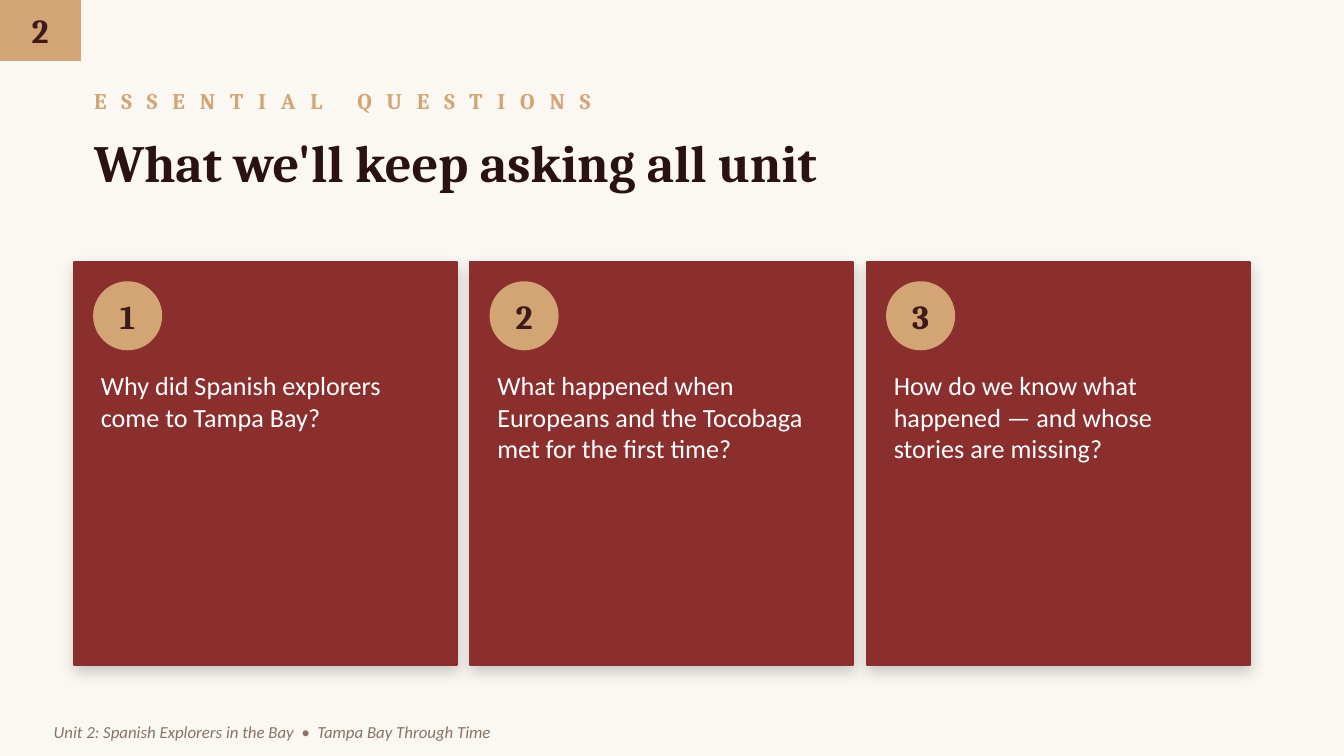
from lxml.etree import SubElement
from pptx import Presentation
from pptx.dml.color import RGBColor
from pptx.enum.shapes import MSO_SHAPE
from pptx.enum.text import MSO_ANCHOR, PP_ALIGN
from pptx.oxml.ns import qn
from pptx.util import Pt

CREAM = RGBColor(0xFB, 0xF7, 0xF2)
TAN = RGBColor(0xD4, 0xA5, 0x74)
BRICK = RGBColor(0x8B, 0x2E, 0x2E)
BROWN = RGBColor(0x3E, 0x1A, 0x1A)
DARK = RGBColor(0x2A, 0x12, 0x12)
TAUPE = RGBColor(0x8A, 0x72, 0x68)
WHITE = RGBColor(0xFF, 0xFF, 0xFF)

QUESTIONS = [
    "Why did Spanish explorers come to Tampa Bay?",
    "What happened when Europeans and the Tocobaga met for the first time?",
    "How do we know what happened — and whose stories are missing?",
]
CARD_LEFT, CARD_TOP = 39.6, 140.4
CARD_WIDTH, CARD_HEIGHT = 205.2, 216
CARD_GAP = 7.2


class QuestionPage:
    FORMATS = {
        "badge": {"name": "Cambria", "size": Pt(18), "bold": True, "color": BROWN},
        "kicker": {"name": "Cambria", "size": Pt(12), "bold": True, "color": TAN},
        "title": {"name": "Cambria", "size": Pt(28), "bold": True, "color": DARK},
        "question": {"name": "Calibri", "size": Pt(14), "color": WHITE},
        "footer": {"name": "Calibri", "size": Pt(9), "italic": True, "color": TAUPE},
    }

    def __init__(self, deck):
        self.page = deck.slides.add_slide(deck.slide_layouts[6])
        fill = self.page.background.fill
        fill.solid()
        fill.fore_color.rgb = CREAM

    def fill_text(self, box, text, style, align=PP_ALIGN.LEFT, anchor=MSO_ANCHOR.MIDDLE):
        frame = box.text_frame
        settings = {"word_wrap": True, "vertical_anchor": anchor, "margin_left": 0,
                    "margin_top": 0, "margin_right": 0, "margin_bottom": 0}
        for name, value in settings.items():
            setattr(frame, name, value)
        para = frame.paragraphs[0]
        para.alignment = align
        span = para.add_run()
        span.text = text
        for name, value in self.FORMATS[style].items():
            if name == "color":
                span.font.color.rgb = value
            else:
                setattr(span.font, name, value)
        return span

    def text(self, left, top, width, height, text, style, anchor=MSO_ANCHOR.MIDDLE):
        box = self.page.shapes.add_textbox(Pt(left), Pt(top), Pt(width), Pt(height))
        return self.fill_text(box, text, style, anchor=anchor)

    def shape(self, kind, left, top, width, height, color):
        shape = self.page.shapes.add_shape(kind, Pt(left), Pt(top), Pt(width), Pt(height))
        shape.shadow.inherit = False
        shape.fill.solid()
        shape.fill.fore_color.rgb = color
        shape.line.color.rgb = color
        shape.line.width = Pt(1)
        return shape

    def badge(self, kind, left, top, width, height, number):
        shape = self.shape(kind, left, top, width, height, TAN)
        self.fill_text(shape, str(number), "badge", PP_ALIGN.CENTER)

    def card(self, left, number, question):
        card = self.shape(MSO_SHAPE.RECTANGLE, left, CARD_TOP, CARD_WIDTH, CARD_HEIGHT, BRICK)
        self.drop_shadow(card)
        self.badge(MSO_SHAPE.OVAL, left + 10.8, CARD_TOP + 10.8, 36, 36, number)
        self.text(left + 14.4, CARD_TOP + 57.6, CARD_WIDTH - 28.8, CARD_HEIGHT - 68.4,
                  question, "question", MSO_ANCHOR.TOP)

    def drop_shadow(self, shape):
        """Add a soft black shadow falling straight down."""
        effects = shape._element.spPr.find(qn("a:effectLst"))
        shadow = SubElement(effects, qn("a:outerShdw"), blurRad=str(Pt(8)), dist=str(Pt(3)),
                            dir="5400000", algn="bl", rotWithShape="0")
        color = SubElement(shadow, qn("a:srgbClr"), val="000000")
        SubElement(color, qn("a:alpha"), val="18000")


def main():
    deck = Presentation()
    deck.slide_width, deck.slide_height = Pt(720), Pt(405)
    page = QuestionPage(deck)
    page.badge(MSO_SHAPE.RECTANGLE, 0, 0, 43.2, 32.4, 2)
    kicker = page.text(50.4, 39.6, 619.2, 28.8, "ESSENTIAL QUESTIONS", "kicker")
    kicker._r.get_or_add_rPr().set("spc", "800")
    page.text(50.4, 68.4, 619.2, 36, "What we'll keep asking all unit", "title")
    for index, question in enumerate(QUESTIONS):
        page.card(CARD_LEFT + index * (CARD_WIDTH + CARD_GAP), index + 1, question)
    page.text(28.8, 383.04, 662.4, 18,
              "Unit 2: Spanish Explorers in the Bay  •  Tampa Bay Through Time", "footer")
    deck.save("out.pptx")


if __name__ == "__main__":
    main()
